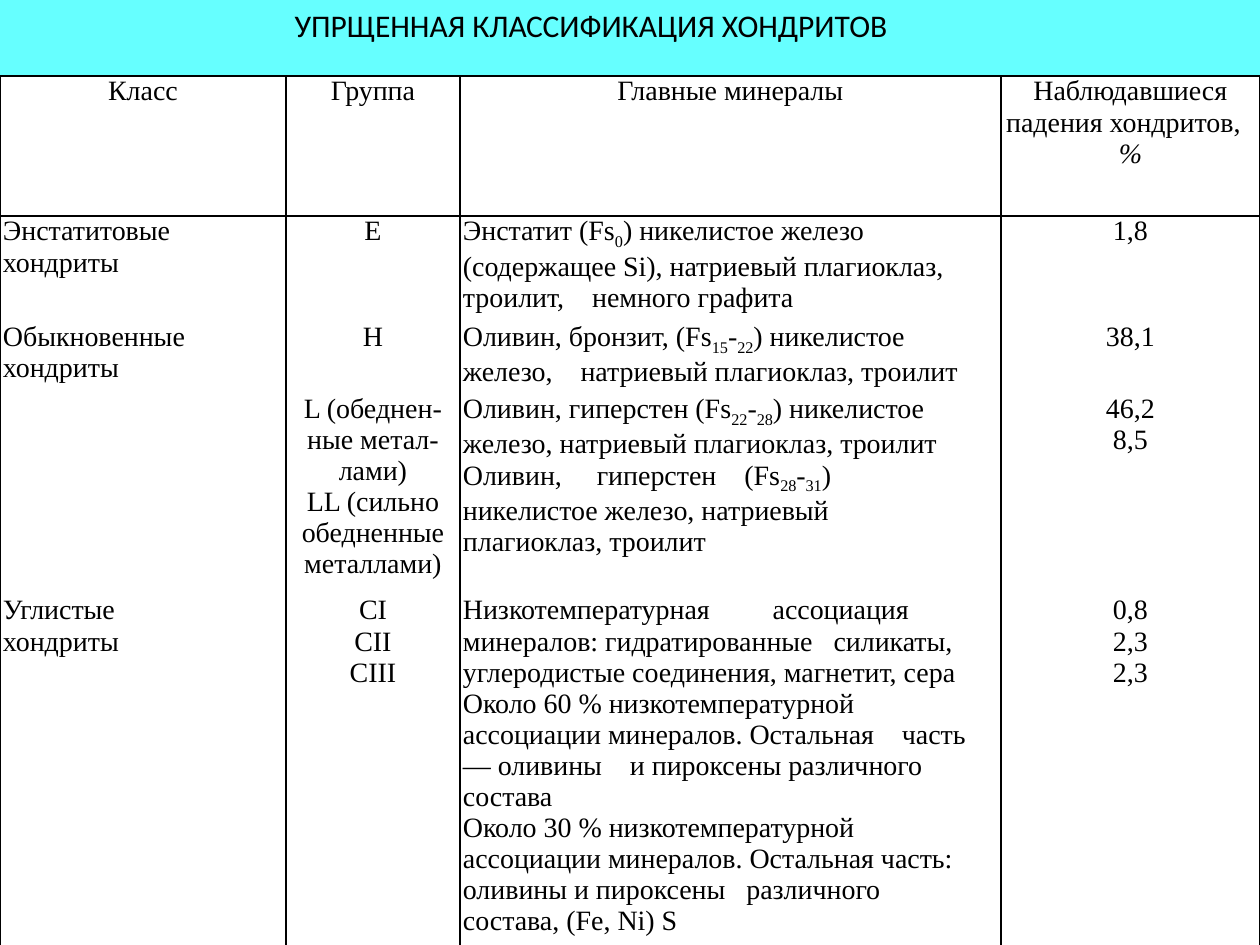
from typing import NamedTuple

from lxml.etree import SubElement
from pptx import Presentation
from pptx.dml.color import RGBColor
from pptx.enum.text import MSO_ANCHOR as Anchor, MSO_AUTO_SIZE as AutoSize, PP_ALIGN as Align
from pptx.oxml.ns import qn
from pptx.util import Emu, Pt

EMU_PER_PX = 914400 / 126
BLACK, WHITE, CYAN = "000000", "FFFFFF", "66FFFF"
COL_WIDTHS = [286, 174, 541, 259]
ROW_HEIGHTS = [140, 105, 72, 201, 366]
COL_ALIGN = [Align.LEFT, Align.CENTER, Align.LEFT, Align.CENTER]


class Sub(NamedTuple):
    text: str


class Italic(NamedTuple):
    text: str


# Each cell is a list of paragraphs; a paragraph is a string or a list of runs.
ROWS = [
    [
        ["Класс"],
        ["Группа"],
        ["Главные минералы"],
        ["Наблюдавшиеся", ["падения хондритов,   ", Italic("%")]],
    ],
    [
        ["Энстатитовые", "хондриты"],
        ["Е"],
        [["Энстатит (Fs", Sub("0"), ") никелистое железо (содержащее Si), "
          "натриевый плагиоклаз,    троилит,    немного графита"]],
        ["1,8"],
    ],
    [
        ["Обыкновенные", "хондриты"],
        ["Н"],
        [["Оливин, бронзит, (Fs", Sub("15"), "-", Sub("22"),
          ") никелистое    железо,    натриевый плагиоклаз, троилит"]],
        ["38,1"],
    ],
    [
        [],
        ["L (обеднен-", "ные метал-", "лами)", "LL (сильно", "обедненные", "металлами)"],
        [["Оливин, гиперстен (Fs", Sub("22"), "-", Sub("28"),
          ") никелистое железо, натриевый плагиоклаз, троилит"],
         ["Оливин,     гиперстен    (Fs", Sub("28"), "-", Sub("31"), ")"],
         "никелистое железо, натриевый",
         "плагиоклаз, троилит"],
        ["46,2", "8,5"],
    ],
    [
        ["Углистые", "хондриты"],
        ["CI", "СII", "CIII"],
        ["Низкотемпературная         ассоциация минералов: гидратированные   "
         "силикаты,    углеродистые соединения, магнетит, сера",
         "Около 60 % низкотемпературной ассоциации минералов. Остальная    часть "
         "— оливины    и пироксены различного состава",
         "Около 30 % низкотемпературной ассоциации минералов. Остальная часть: "
         "оливины и пироксены   различного   состава, (Fe, Ni) S"],
        ["0,8", "2,3", "2,3"],
    ],
]


def px(n: int) -> Emu:
    return Emu(round(n * EMU_PER_PX))


def color(value: str) -> RGBColor:
    return RGBColor.from_string(value)


def set_attrs(obj, values: dict) -> None:
    for name, value in values.items():
        setattr(obj, name, value)


def add_run(p, text: str, font: str, size: int):
    r = p.add_run()
    r.text = text
    set_attrs(r.font, {"name": font, "size": Pt(size)})
    r.font.color.rgb = color(BLACK)
    return r


def fill_paragraph(p, content, align) -> None:
    p.alignment = align
    for piece in [content] if isinstance(content, str) else content:
        text = piece if isinstance(piece, str) else piece.text
        r = add_run(p, text, "Times New Roman", 16)
        if isinstance(piece, Sub):
            r.font._element.set("baseline", "-25000")
        elif isinstance(piece, Italic):
            r.font.italic = True


def set_borders(cell, sides: str) -> None:
    """Draw 1 pt lines on the sides named by L, R, T, B and clear the others."""
    tc_pr = cell._tc.get_or_add_tcPr()
    for i, side in enumerate("LRTB"):
        ln = tc_pr.makeelement(qn(f"a:ln{side}"), {"w": str(Pt(1))})
        if side in sides:
            SubElement(SubElement(ln, qn("a:solidFill")), qn("a:srgbClr"), val=BLACK)
        else:
            SubElement(ln, qn("a:noFill"))
        tc_pr.insert(i, ln)


def row_sides(row: int) -> str:
    return "LR" + ("T" if row <= 1 else "") + ("B" if row in (0, len(ROWS) - 1) else "")


def add_classification(s) -> None:
    frame = s.shapes.add_table(len(ROWS), len(COL_WIDTHS), px(0), px(76),
                               px(sum(COL_WIDTHS)), px(sum(ROW_HEIGHTS)))
    table = frame.table
    set_attrs(table, {"first_row": False, "horz_banding": False})
    for column, width in zip(table.columns, COL_WIDTHS):
        column.width = px(width)
    for i, (height, row) in enumerate(zip(ROW_HEIGHTS, ROWS)):
        table.rows[i].height = px(height)
        for j, paragraphs in enumerate(row):
            cell = table.cell(i, j)
            set_attrs(cell, {"margin_left": px(3), "margin_right": px(3),
                             "margin_top": 0, "margin_bottom": 0})
            cell.fill.solid()
            cell.fill.fore_color.rgb = color(WHITE)
            set_borders(cell, row_sides(i))
            tf = cell.text_frame
            for k, content in enumerate(paragraphs):
                p = tf.add_paragraph() if k else tf.paragraphs[0]
                fill_paragraph(p, content, Align.CENTER if i == 0 else COL_ALIGN[j])


def set_title(s, text: str) -> None:
    sp = s.shapes.title
    set_attrs(sp, {"left": px(282), "top": px(0), "width": px(624), "height": px(51)})
    tf = sp.text_frame
    set_attrs(tf, {"word_wrap": True, "vertical_anchor": Anchor.TOP,
                   "auto_size": AutoSize.SHAPE_TO_FIT_TEXT})
    p = tf.paragraphs[0]
    p.alignment = Align.LEFT
    add_run(p, text, "Calibri", 18)


def main() -> None:
    prs = Presentation()
    set_attrs(prs, {"slide_width": px(1260), "slide_height": px(945)})
    s = prs.slides.add_slide(prs.slide_layouts[5])
    s.background.fill.solid()
    s.background.fill.fore_color.rgb = color(CYAN)
    set_title(s, "УПРЩЕННАЯ КЛАССИФИКАЦИЯ ХОНДРИТОВ")
    add_classification(s)
    prs.save("out.pptx")


if __name__ == "__main__":
    main()
